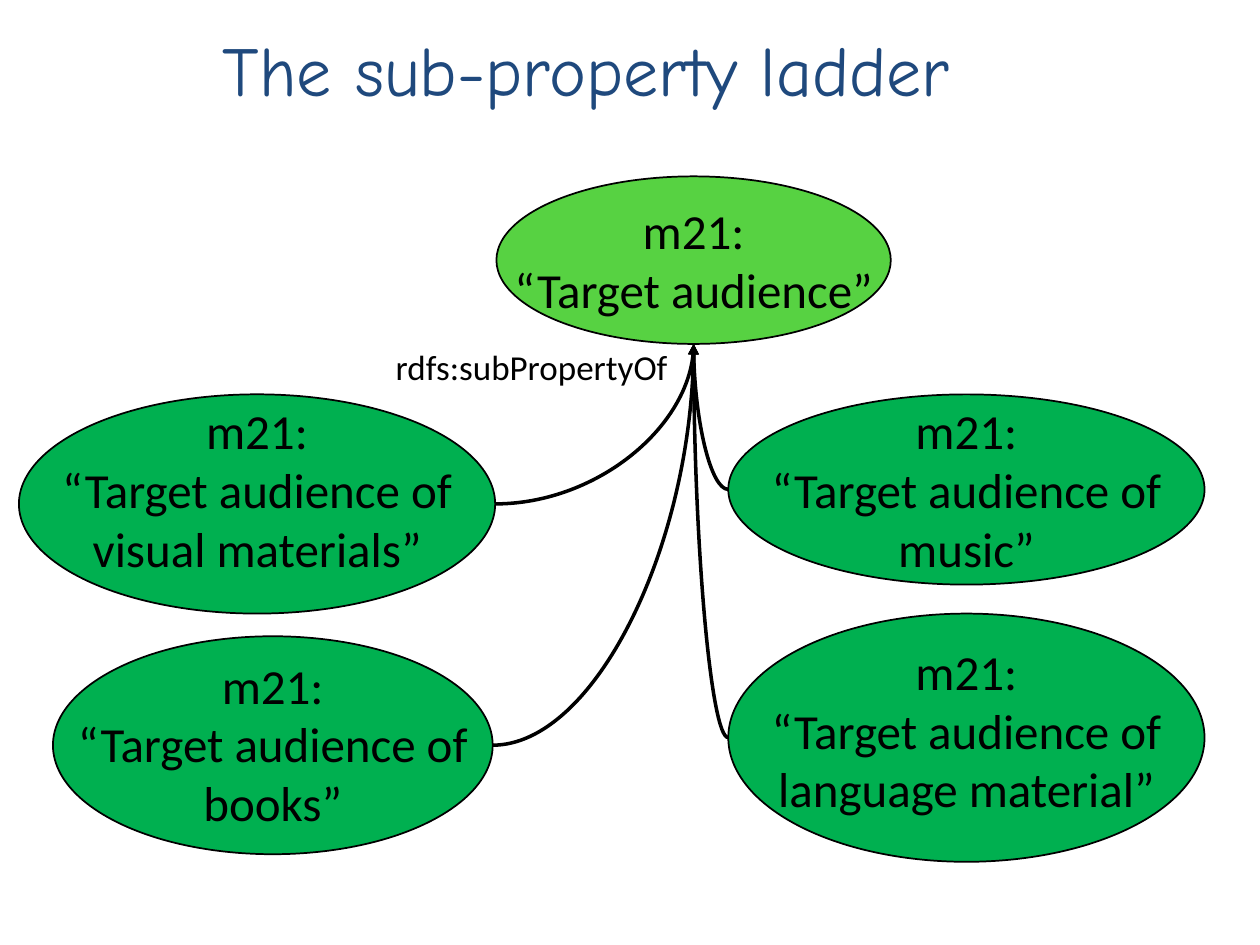
"""Build the slide that shows the sub-property ladder for target audience."""
import dataclasses

import pptx
import pptx.dml.color
import pptx.enum.shapes
import pptx.enum.text
import pptx.oxml
import pptx.oxml.ns
import pptx.shapes.shapetree
import pptx.util

Inches = pptx.util.Inches
RGBColor = pptx.dml.color.RGBColor


@dataclasses.dataclass(frozen=True)
class Theme:
    title_font: str = "Comic Neue"
    body_font: str = "Calibri"
    title_size: int = 40
    property_size: int = 28
    relation_size: int = 20
    outline_width: int = 1
    arrow_width: int = 2
    title_color: str = "1F497D"
    ink: str = "000000"
    parent_fill: str = "57D242"
    child_fill: str = "00B050"


@dataclasses.dataclass(frozen=True)
class Property:
    lines: tuple[str, ...]
    left: float
    top: float
    width: float
    height: float
    fill: str
    text_top: float
    text_width: float = 3.33
    text_height: float = 1.51

    @property
    def center_x(self) -> float:
        return self.left + self.width / 2

    @property
    def center_y(self) -> float:
        return self.top + self.height / 2


THEME = Theme()
PARENT = Property(("m21:", "“Target audience”"), 3.94, 1.4, 3.13, 1.33,
                  THEME.parent_fill, 1.54, 3.07, 1.04)


def child(last_line: str, left: float, top: float, width: float,
          height: float, text_top: float) -> Property:
    """Describe a sub-property of the parent."""
    lines = ("m21:", "“Target audience of", last_line)
    return Property(lines, left, top, width, height, THEME.child_fill, text_top)


CHILDREN = (
    child("books”", 0.42, 5.05, 3.49, 1.73, 5.15),
    child("language material”", 5.78, 4.87, 3.78, 1.97, 5.04),
    child("music”", 5.78, 3.13, 3.78, 1.51, 3.13),
    child("visual materials”", 0.15, 3.13, 3.78, 1.74, 3.13),
)


def add_text(shapes: pptx.shapes.shapetree._BaseGroupShapes,
             lines: tuple[str, ...], left: float, top: float, width: float,
             height: float, size: int, font: str = THEME.body_font,
             color: str = THEME.ink,
             align: pptx.enum.text.PP_ALIGN = pptx.enum.text.PP_ALIGN.CENTER) -> None:
    """Add an unwrapped text box with one paragraph per line."""
    box = shapes.add_textbox(Inches(left), Inches(top), Inches(width), Inches(height))
    frame = box.text_frame
    frame.word_wrap = False
    frame.auto_size = pptx.enum.text.MSO_AUTO_SIZE.SHAPE_TO_FIT_TEXT
    for index, line in enumerate(lines):
        paragraph = frame.add_paragraph() if index else frame.paragraphs[0]
        paragraph.alignment = align
        run = paragraph.add_run()
        run.text = line
        run.font.name = font
        run.font.size = pptx.util.Pt(size)
        run.font.color.rgb = RGBColor.from_string(color)


def add_property(shapes: pptx.shapes.shapetree.SlideShapes, item: Property) -> None:
    """Add a group of an ellipse and the label centred across it."""
    group = shapes.add_group_shape()
    ellipse = group.shapes.add_shape(
        pptx.enum.shapes.MSO_SHAPE.OVAL, Inches(item.left), Inches(item.top),
        Inches(item.width), Inches(item.height))
    ellipse.shadow.inherit = False
    ellipse.fill.solid()
    ellipse.fill.fore_color.rgb = RGBColor.from_string(item.fill)
    ellipse.line.color.rgb = RGBColor.from_string(THEME.ink)
    ellipse.line.width = pptx.util.Pt(THEME.outline_width)
    add_text(group.shapes, item.lines, item.center_x - item.text_width / 2,
             item.text_top, item.text_width, item.text_height, THEME.property_size)


def add_relation(shapes: pptx.shapes.shapetree.SlideShapes,
                 source: Property, target: Property) -> None:
    """Add a curved arrow from the source's inner side to the target's foot."""
    on_left = source.center_x < target.center_x
    start_x = source.left + source.width if on_left else source.left
    arrow = shapes.add_connector(
        pptx.enum.shapes.MSO_CONNECTOR.CURVE, Inches(start_x), Inches(source.center_y),
        Inches(target.center_x), Inches(target.top + target.height))
    arrow.line.color.rgb = RGBColor.from_string(THEME.ink)
    arrow.line.width = pptx.util.Pt(THEME.arrow_width)
    properties = arrow._element.spPr
    properties.find(pptx.oxml.ns.qn("a:prstGeom")).set("prst", "curvedConnector2")
    namespace = pptx.oxml.ns.nsdecls("a")
    arrow.line._get_or_add_ln().append(
        pptx.oxml.parse_xml(f'<a:tailEnd {namespace} type="triangle"/>'))
    properties.append(pptx.oxml.parse_xml(f"<a:effectLst {namespace}/>"))


def main() -> None:
    """Build and save the slide."""
    presentation = pptx.Presentation()
    presentation.slide_width = Inches(10)
    presentation.slide_height = Inches(7.5)
    shapes = presentation.slides.add_slide(presentation.slide_layouts[6]).shapes
    add_text(shapes, ("The sub-property ladder",), 1.67, 0.16, 6.66, 0.77,
             THEME.title_size, THEME.title_font, THEME.title_color,
             pptx.enum.text.PP_ALIGN.LEFT)
    for item in (PARENT, *CHILDREN):
        add_property(shapes, item)
    add_text(shapes, ("rdfs:subPropertyOf",), 3.03, 2.69, 2.38, 0.44,
             THEME.relation_size)
    for item in CHILDREN:
        add_relation(shapes, item, PARENT)
    presentation.save("out.pptx")


if __name__ == "__main__":
    main()
